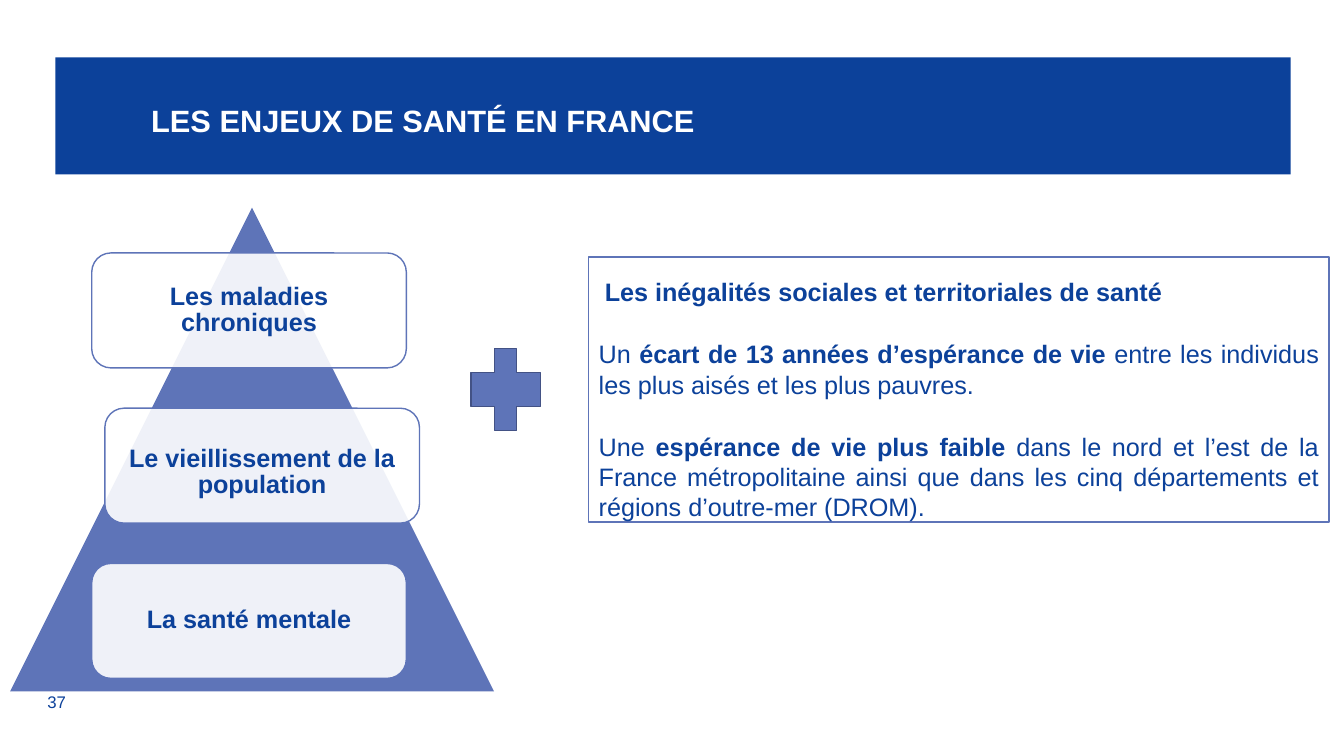
from lxml import etree
from pptx import Presentation
from pptx.dml.color import RGBColor
from pptx.enum import shapes, text
from pptx.oxml import ns
from pptx.util import Inches, Pt

COLORS = {"navy": "0C419A", "blue": "5E74B8", "edge": "435285", "white": "FFFFFF"}

deck = Presentation()
deck.slide_width, deck.slide_height = Inches(13.33), Inches(7.5)
page = deck.slides.add_slide(deck.slide_layouts[6])


def add_figure(kind, left, top, width, height, fill=None, line=None):
    figure = page.shapes.add_shape(
        kind, Inches(left), Inches(top), Inches(width), Inches(height))
    figure.shadow.inherit = False
    if fill:
        figure.fill.solid()
        figure.fill.fore_color.rgb = RGBColor.from_string(COLORS[fill])
    else:
        figure.fill.background()
    if line:
        figure.line.color.rgb = RGBColor.from_string(COLORS[line])
        figure.line.width = Pt(1)
    else:
        figure.line.fill.background()
    return figure


def write(box, paragraphs, size=18, color="navy", align=text.PP_ALIGN.LEFT,
          anchor=text.MSO_ANCHOR.MIDDLE, insets=(0, 0, 0, 0), gap=0, leading=None):
    """Fill a shape; each paragraph is a list of (wording, bold) spans."""
    frame = box.text_frame
    frame.word_wrap = True
    frame.vertical_anchor = anchor
    (frame.margin_left, frame.margin_top,
     frame.margin_right, frame.margin_bottom) = [Inches(inset) for inset in insets]
    for index, spans in enumerate(paragraphs):
        para = frame.add_paragraph() if index else frame.paragraphs[0]
        para.alignment = align
        if index:
            para.space_before = Pt(gap)
        if leading:
            para.line_spacing = Pt(leading)
        for wording, bold in spans:
            span = para.add_run()
            span.text = wording
            span.font.name = "Arial"
            span.font.size = Pt(size)
            span.font.bold = bold
            span.font.color.rgb = RGBColor.from_string(COLORS[color])


banner = add_figure(shapes.MSO_SHAPE.RECTANGLE, 0.55, 0.57, 12.25, 1.16, fill="navy")
write(banner, [[("LES ENJEUX DE SANTÉ EN FRANCE", True)]], size=22, color="white",
      insets=(0.95, 0.08, 0, 0))

inequalities = add_figure(
    shapes.MSO_SHAPE.RECTANGLE, 5.84, 2.55, 7.34, 2.63, line="blue")
write(inequalities, [
    [("Les inégalités sociales et territoriales de santé", True)],
    [("Un ", False), ("écart de 13 années d’espérance de vie", True),
     (" entre les individus les plus aisés et les plus pauvres.", False)],
    [("Une ", False), ("espérance de vie plus faible", True),
     (" dans le nord et l’est de la France métropolitaine ainsi que dans les cinq "
      "départements et régions d’outre-mer (DROM).", False)],
], align=text.PP_ALIGN.JUSTIFY, anchor=text.MSO_ANCHOR.TOP,
    insets=(0.1, 0.19, 0.1, 0), gap=23)
heading = inequalities.text_frame.paragraphs[0]
heading._p.get_or_add_pPr().set("marL", str(Inches(0.06)))

# Pyramid with its three stacked labels
add_figure(shapes.MSO_SHAPE.ISOSCELES_TRIANGLE, 0.1, 2.06, 4.8, 4.8, fill="blue")
issues = [
    ("Les maladies chroniques", 0.91, 0),
    ("Le vieillissement de la population", 1.04, 0.14),
    ("La santé mentale", 0.91, 0),
]
for row, (issue, left, top_inset) in enumerate(issues):
    label = add_figure(shapes.MSO_SHAPE.ROUNDED_RECTANGLE, left, 2.51 + 1.54 * row,
                       3.12, 1.14, fill="white", line="blue")
    tint = label.fill._xPr.find(".//" + ns.qn("a:srgbClr"))
    etree.SubElement(tint, ns.qn("a:alpha"), val="90000")
    write(label, [[(issue, True)]], align=text.PP_ALIGN.CENTER,
          insets=(0.15, top_inset, 0.15, 0), leading=18.7)

plus = add_figure(shapes.MSO_SHAPE.CROSS, 4.67, 3.46, 0.69, 0.81,
                  fill="blue", line="edge")
plus.adjustments[0] = 0.34

number = page.shapes.add_textbox(Inches(0.43), Inches(6.81), Inches(0.79), Inches(0.31))
write(number, [[("37", False)]], size=12, insets=(0.04, 0, 0, 0))

deck.save("out.pptx")
